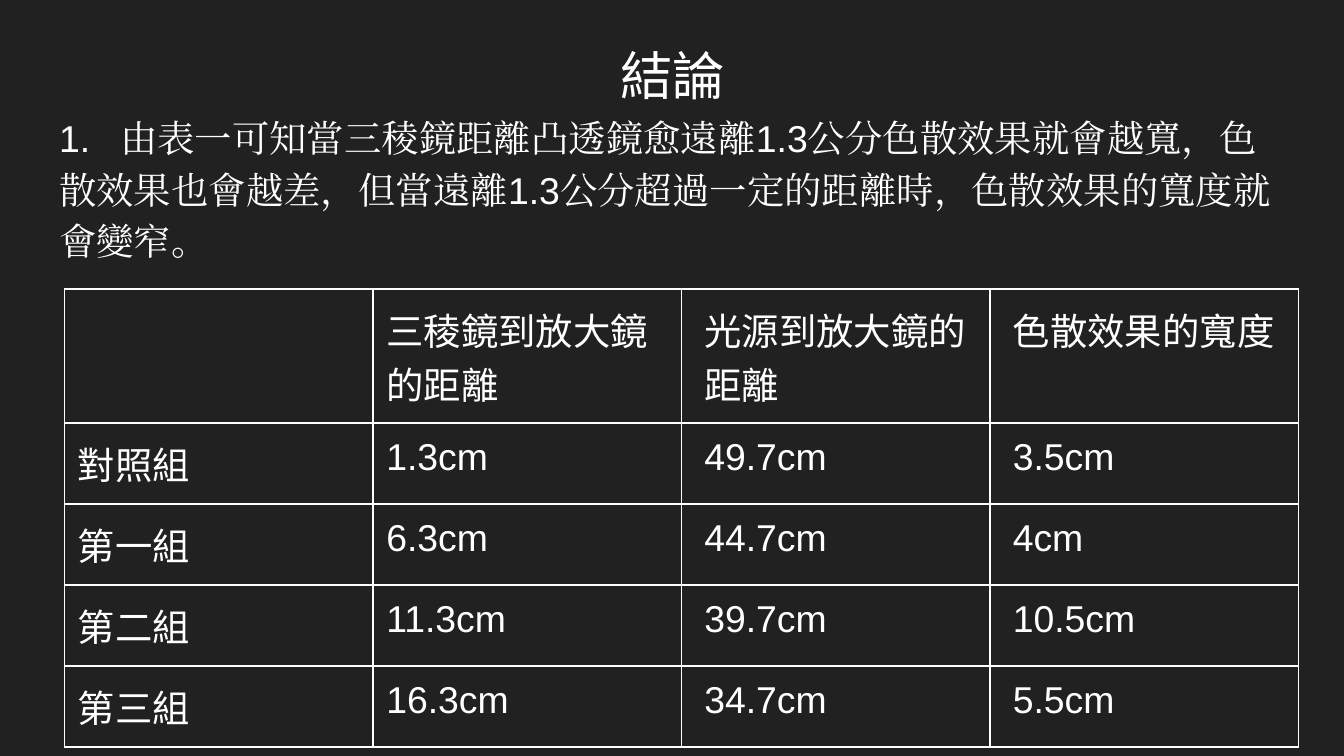
import lxml.etree
import pptx
import pptx.dml.color
import pptx.enum.text
import pptx.oxml.ns
import pptx.util
from pptx.util import Cm, Pt

COLORS = {"background": "212121", "text": "FFFFFF", "border": "FFFFFF"}
ALIGN = pptx.enum.text.PP_ALIGN
LATIN, SERIF = "Arial", "Times New Roman"
MARGIN = Cm(0.25)

CONCLUSION = [
    ("1.\t", LATIN),
    ("由表一可知當三稜鏡距離凸透鏡愈遠離", SERIF),
    ("1.3", LATIN),
    ("公分色散效果就會越寬，色散效果也會越差，但當遠離", SERIF),
    ("1.3", LATIN),
    ("公分超過一定的距離時，色散效果的寬度就會變窄。", SERIF),
]
RESULTS = [
    ["", "三稜鏡到放大鏡的距離", "光源到放大鏡的距離", "色散效果的寬度"],
    ["對照組", "1.3cm", "49.7cm", "3.5cm"],
    ["第一組", "6.3cm", "44.7cm", "4cm"],
    ["第二組", "11.3cm", "39.7cm", "10.5cm"],
    ["第三組", "16.3cm", "34.7cm", "5.5cm"],
]


def rgb(name):
    return pptx.dml.color.RGBColor.from_string(COLORS[name])


def add_xml(parent, tag, **attrs):
    return lxml.etree.SubElement(parent, pptx.oxml.ns.qn(tag), attrs)


def add_run(p, text, size, font=LATIN, east_asian=True):
    r = p.add_run()
    r.text = text
    r.font.size = Pt(size)
    r.font.name = font
    r.font.color.rgb = rgb("text")
    if east_asian:
        add_xml(r.font._element, "a:ea", typeface=font)


def set_margins(target):
    target.margin_left = target.margin_right = MARGIN
    target.margin_top = target.margin_bottom = MARGIN


def add_text(s, left, top, width, height):
    tf = s.shapes.add_textbox(Cm(left), Cm(top), Cm(width), Cm(height)).text_frame
    tf.word_wrap = True
    set_margins(tf)
    return tf.paragraphs[0]


def style_cell(cell):
    set_margins(cell)
    tc_pr = cell._tc.get_or_add_tcPr()
    # Borders come before the fill in the cell properties
    for side in ("a:lnL", "a:lnR", "a:lnT", "a:lnB"):
        ln = add_xml(tc_pr, side, w=str(Pt(1)))
        add_xml(add_xml(ln, "a:solidFill"), "a:srgbClr", val=COLORS["border"])
    cell.fill.solid()
    cell.fill.fore_color.rgb = rgb("background")


def fill_cell(cell, text, column):
    p = cell.text_frame.paragraphs[0]
    p.space_before = p.space_after = Pt(12)
    if column == 0:
        p.alignment = ALIGN.JUSTIFY
    elif column >= 2:
        p._p.get_or_add_pPr().set("marL", str(Cm(0.18)))
    add_run(p, text, 20, east_asian=False)


def add_results_table(s):
    rows, columns = len(RESULTS), len(RESULTS[0])
    table = s.shapes.add_table(rows, columns, Cm(1.22), Cm(5.46),
                               Cm(23.32), Cm(8.64)).table
    table.first_row = table.horz_banding = False
    for i, row in enumerate(RESULTS):
        # The heading row holds two lines
        table.rows[i].height = Cm(2.54 if i == 0 else 1.53)
        for j, text in enumerate(row):
            cell = table.cell(i, j)
            style_cell(cell)
            if text:
                fill_cell(cell, text, j)


def main():
    prs = pptx.Presentation()
    prs.slide_width, prs.slide_height = Cm(25.4), Cm(14.29)
    s = prs.slides.add_slide(prs.slide_layouts[6])
    s.background.fill.solid()
    s.background.fill.fore_color.rgb = rgb("background")

    # Title
    p = add_text(s, 0.87, 0.56, 23.67, 1.6)
    p.alignment = ALIGN.CENTER
    add_run(p, "結論", 28)

    # Numbered conclusion, with a tab after the number
    p = add_text(s, 0.87, 1.8, 23.67, 10.13)
    p.line_spacing = 1.15
    p.space_before = Pt(12)
    tabs = add_xml(p._p.get_or_add_pPr(), "a:tabLst")
    add_xml(tabs, "a:tab", pos=str(Cm(1.15)), algn="l")
    for text, font in CONCLUSION:
        add_run(p, text, 20, font)

    # Measurements
    add_results_table(s)
    prs.save("out.pptx")


if __name__ == "__main__":
    main()
